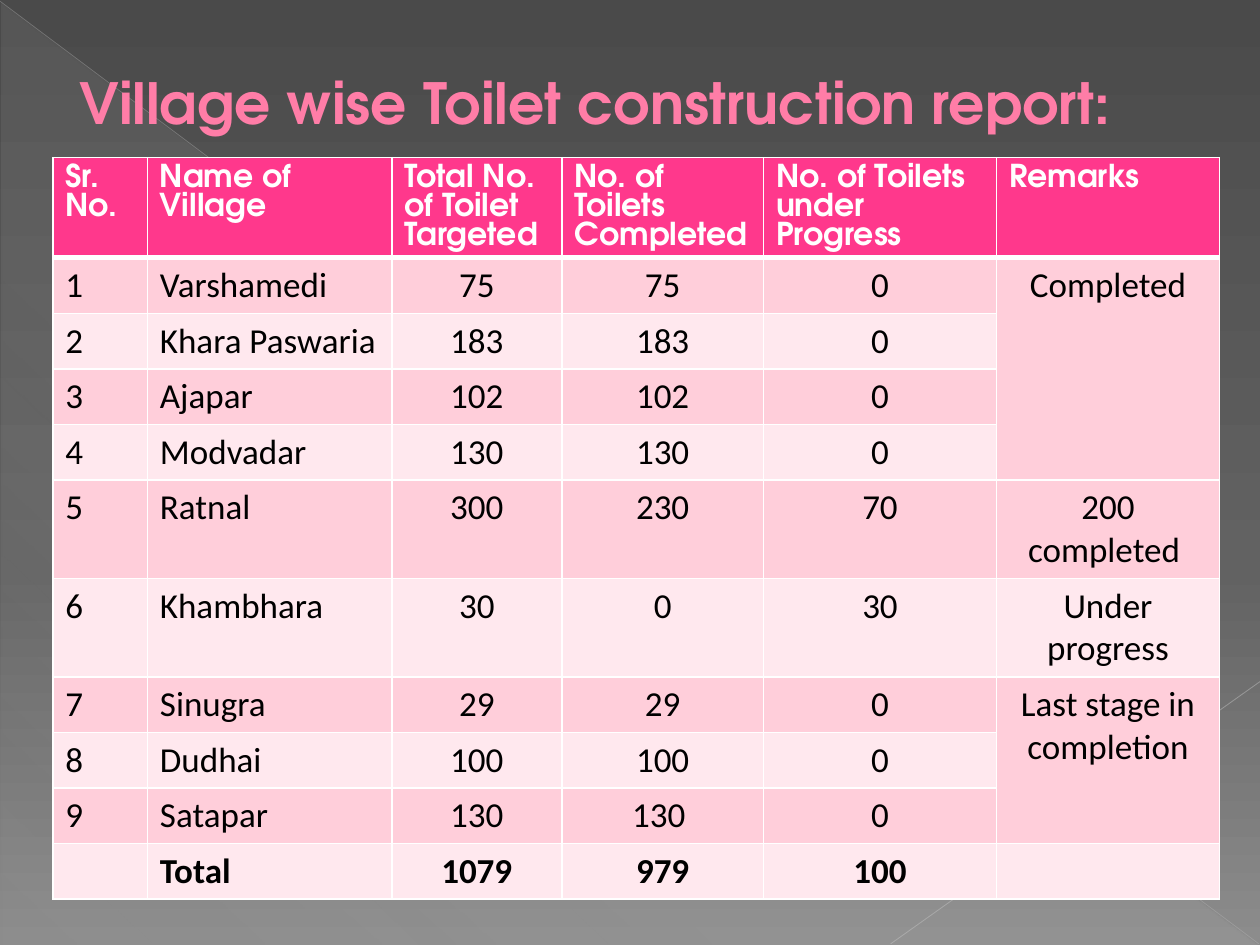
from lxml import etree
from pptx import Presentation
from pptx import util as u
from pptx.dml.color import RGBColor
from pptx.enum import shapes, text
from pptx.oxml import parse_xml
from pptx.oxml.ns import nsdecls, qn

COLORS = {
    "title": "FF7DA7", "header": "FF388C", "odd": "FFCEDA", "even": "FFE8EE",
    "white": "FFFFFF", "black": "000000", "triangle": "D2D2D2",
    "long line": "BFBFBF", "short line": "C6C6C6",
}
BACKGROUND_STOPS = [(0, "4A4A4A", 100), (60, "626262", 100), (100, "8C8C8C", 100)]
TRIANGLE_STOPS = [(place, COLORS["triangle"], alpha)
                  for place, alpha in ((0, 10), (70, 8), (100, 1))]
HEADING_FONT = "TeX Gyre Adventor"
BODY_FONT = "Calibri"

COLUMN_WIDTHS = [54, 139.7, 97.2, 115.2, 133.2, 127.4]
HEADER_HEIGHT, ROW_HEIGHT, TALL_HEIGHT = 56.9, 31.75, 56.2
TALL_ROWS = (5, 6)
REMARK_SPANS = [(1, 4), (7, 9)]
ROWS = [
    ["Sr.\nNo.", "Name of Village", "Total No. of Toilet Targeted",
     "No. of Toilets Completed", "No. of Toilets under Progress", "Remarks"],
    ["1", "Varshamedi", "75", "75", "0", "Completed"],
    ["2", "Khara Paswaria", "183", "183", "0", ""],
    ["3", "Ajapar", "102", "102", "0", ""],
    ["4", "Modvadar", "130", "130", "0", ""],
    ["5", "Ratnal", "300", "230", "70", "200 completed "],
    ["6", "Khambhara", "30", "0", "30", "Under progress"],
    ["7", "Sinugra", "29", "29", "0", "Last stage in completion"],
    ["8", "Dudhai", "100", "100", "0", ""],
    ["9", "Satapar", "130", "130 ", "0", ""],
    ["", "Total", "1079", "979", "100", ""],
]


def rgb(name):
    return RGBColor.from_string(COLORS[name])


def gradient(stops, angle):
    """Return a gradFill element; stops are (percent, colour, opacity)."""
    stop_xml = "".join(
        f'<a:gs pos="{place * 1000}"><a:srgbClr val="{color}">'
        f'<a:alpha val="{alpha * 1000}"/></a:srgbClr></a:gs>'
        for place, color, alpha in stops)
    return parse_xml(
        f'<a:gradFill {nsdecls("a")} rotWithShape="1"><a:gsLst>{stop_xml}</a:gsLst>'
        f'<a:lin ang="{angle * 60000}" scaled="0"/></a:gradFill>')


def replace_solid_fill(properties, fill):
    properties.replace(properties.find(qn("a:solidFill")), fill)


def set_background(slide):
    slide.background.fill.solid()
    properties = slide.background._cSld.find(qn("p:bg")).find(qn("p:bgPr"))
    replace_solid_fill(properties, gradient(BACKGROUND_STOPS, 90))


def add_triangle(slide):
    triangle = slide.shapes.add_shape(
        shapes.MSO_SHAPE.RIGHT_TRIANGLE, u.Pt(0.7), u.Pt(1.4), u.Pt(718.6), u.Pt(538.6))
    triangle.shadow.inherit = False
    triangle.line.fill.background()
    triangle.fill.solid()
    replace_solid_fill(triangle._element.spPr, gradient(TRIANGLE_STOPS, 133))


def add_line(slide, start, end, color, width, opacity):
    line = slide.shapes.add_connector(
        shapes.MSO_CONNECTOR.STRAIGHT, *(u.Pt(value) for value in start + end))
    line.line.color.rgb = rgb(color)
    line.line.width = u.Pt(width)
    properties = line._element.spPr
    color_element = next(properties.iter(qn("a:srgbClr")))
    etree.SubElement(color_element, qn("a:alpha"), val=str(opacity * 1000))
    etree.SubElement(properties, qn("a:effectLst"))


def format_text(frame, font, size, color, bold, alignment):
    for paragraph in frame.paragraphs:
        paragraph.alignment = alignment
        for run in paragraph.runs:
            run.font.name = font
            run.font.size = u.Pt(size)
            run.font.bold = bold
            run.font.color.rgb = rgb(color)


def add_title(slide, wording):
    title = slide.shapes.title
    title.left, title.top = u.Pt(0), u.Pt(20.9)
    title.width, title.height = u.Pt(689.8), u.Pt(74.9)
    frame = title.text_frame
    frame.text = wording
    frame.word_wrap = True
    frame.auto_size = text.MSO_AUTO_SIZE.NONE
    frame.vertical_anchor = text.MSO_ANCHOR.MIDDLE
    format_text(frame, HEADING_FONT, 32.4, "title", True, text.PP_ALIGN.LEFT)
    frame.paragraphs[0]._p.get_or_add_pPr().set("marL", str(u.Pt(38.2)))
    slide.shapes._spTree.append(title._element)  # in front of the decoration


def set_borders(cell, bottom_width):
    properties = cell._tc.get_or_add_tcPr()
    widths = {"lnL": 1, "lnR": 1, "lnT": 1, "lnB": bottom_width}
    for index, (side, width) in enumerate(widths.items()):
        properties.insert(index, parse_xml(
            f'<a:{side} {nsdecls("a")} w="{u.Pt(width)}"><a:solidFill>'
            f'<a:srgbClr val="{COLORS["white"]}"/></a:solidFill></a:{side}>'))


def format_cell(cell, row, column):
    is_header = row == 0
    cell.fill.solid()
    cell.fill.fore_color.rgb = rgb("header" if is_header else "odd" if row % 2 else "even")
    set_borders(cell, 3 if is_header else 1)
    if is_header:
        format_text(cell.text_frame, HEADING_FONT, 18, "white", True, text.PP_ALIGN.LEFT)
    else:
        alignment = text.PP_ALIGN.LEFT if column < 2 else text.PP_ALIGN.CENTER
        is_total = row == len(ROWS) - 1
        format_text(cell.text_frame, BODY_FONT, 20, "black", is_total, alignment)


def add_report_table(slide):
    heights = [HEADER_HEIGHT] + [TALL_HEIGHT if row in TALL_ROWS else ROW_HEIGHT
                                 for row in range(1, len(ROWS))]
    table = slide.shapes.add_table(
        len(ROWS), len(COLUMN_WIDTHS), u.Pt(30.2), u.Pt(90),
        u.Pt(sum(COLUMN_WIDTHS)), u.Pt(sum(heights))).table
    for column, width in zip(table.columns, COLUMN_WIDTHS):
        column.width = u.Pt(width)
    for row, height in zip(table.rows, heights):
        row.height = u.Pt(height)
    for row, values in enumerate(ROWS):
        for column, value in enumerate(values):
            cell = table.cell(row, column)
            cell.text_frame.text = value
            format_cell(cell, row, column)
    remarks = len(COLUMN_WIDTHS) - 1
    for first, last in REMARK_SPANS:
        table.cell(first, remarks).merge(table.cell(last, remarks))


def main():
    presentation = Presentation()
    presentation.slide_width, presentation.slide_height = u.Pt(720), u.Pt(540)
    slide = presentation.slides.add_slide(presentation.slide_layouts[5])
    set_background(slide)
    add_triangle(slide)
    add_line(slide, (0, 0.7), (719.3, 539.3), "long line", 0.39, 35)
    add_line(slide, (720, 389.5), (509, 539.3), "short line", 0.47, 45)
    add_title(slide, "Village wise Toilet construction report:")
    add_report_table(slide)
    presentation.save("out.pptx")


if __name__ == "__main__":
    main()
